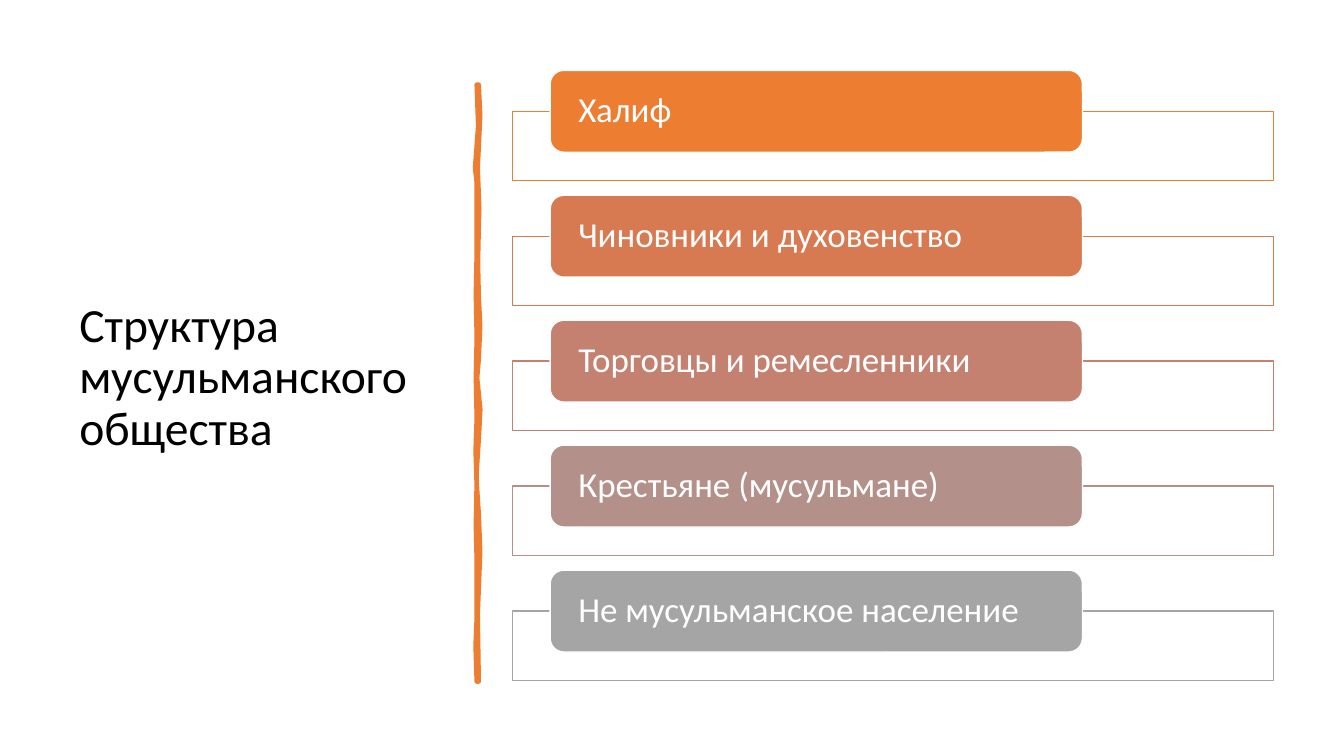
from dataclasses import dataclass

from lxml.etree import SubElement
from pptx import Presentation
from pptx.dml.color import RGBColor
from pptx.enum.shapes import MSO_SHAPE
from pptx.enum.text import MSO_ANCHOR, MSO_AUTO_SIZE, PP_ALIGN
from pptx.oxml.ns import qn
from pptx.shapes.autoshape import Shape
from pptx.slide import Slide
from pptx.text.text import TextFrame
from pptx.util import Pt

PX = 9525
FONT = "Calibri"
BLACK = RGBColor(0x00, 0x00, 0x00)
WHITE = RGBColor(0xFF, 0xFF, 0xFF)
ORANGE = RGBColor(0xED, 0x7D, 0x31)
TERRACOTTA = RGBColor(0xD8, 0x7A, 0x51)
ROSE = RGBColor(0xC4, 0x81, 0x70)
MAUVE = RGBColor(0xB4, 0x90, 0x8B)
GRAY = RGBColor(0xA5, 0xA5, 0xA5)


@dataclass(frozen=True)
class Box:
    left: int
    top: int
    width: int
    height: int

    def lower(self, distance: int) -> "Box":
        return Box(self.left, self.top + distance, self.width, self.height)

    def emu(self) -> tuple[int, int, int, int]:
        return self.left * PX, self.top * PX, self.width * PX, self.height * PX


@dataclass(frozen=True)
class SocialClass:
    name: str
    color: RGBColor


CLASSES = [
    SocialClass("Халиф", ORANGE),
    SocialClass("Чиновники и духовенство", TERRACOTTA),
    SocialClass("Торговцы и ремесленники", ROSE),
    SocialClass("Крестьяне (мусульмане)", MAUVE),
    SocialClass("Не мусульманское население", GRAY),
]
TITLE = Box(66, 67, 359, 587)
FRAME = Box(488, 106, 725, 66)
LABEL = Box(524, 67, 507, 78)
ROW_STEP = 119
LABEL_INSET = 23

BRUSH_UNITS_PER_PX = 10
BRUSH_RIGHT_EDGE = [
    (4560, 806), (4574, 1100), (4560, 1402), (4550, 1600), (4565, 1980),
    (4560, 2170), (4553, 2500), (4560, 2822), (4574, 3100), (4560, 3418),
    (4545, 3600), (4575, 3900), (4560, 4186), (4537, 4540), (4560, 4896),
    (4574, 5250), (4560, 5606), (4550, 5850), (4560, 6490),
]
BRUSH_LEFT_EDGE = [
    (4541, 6490), (4530, 6150), (4541, 5885), (4541, 5347), (4533, 5000),
    (4541, 4579), (4530, 4300), (4541, 3984), (4533, 3600), (4541, 3216),
    (4533, 2800), (4541, 2400), (4541, 1738), (4525, 1600), (4555, 1200),
    (4541, 806),
]


def write(frame: TextFrame, text: str, *, size: int, color: RGBColor) -> None:
    frame.word_wrap = True
    frame.auto_size = MSO_AUTO_SIZE.NONE
    frame.vertical_anchor = MSO_ANCHOR.MIDDLE
    para = frame.paragraphs[0]
    para.alignment = PP_ALIGN.LEFT
    para.line_spacing = 0.9
    span = para.add_run()
    span.text = text
    span.font.name = FONT
    span.font.size = Pt(size)
    span.font.color.rgb = color


def paint(shape: Shape, *, fill: RGBColor, line: RGBColor, width: float) -> None:
    shape.shadow.inherit = False
    shape.fill.solid()
    shape.fill.fore_color.rgb = fill
    shape.line.color.rgb = line
    shape.line.width = Pt(width)


def draw_title(page: Slide) -> None:
    title = page.shapes.title
    title.left, title.top, title.width, title.height = TITLE.emu()
    write(title.text_frame, "Структура мусульманского общества", size=34, color=BLACK)


def draw_brush_line(page: Slide) -> None:
    start, *rest = BRUSH_RIGHT_EDGE + BRUSH_LEFT_EDGE
    builder = page.shapes.build_freeform(*start, scale=PX / BRUSH_UNITS_PER_PX)
    builder.add_line_segments(rest, close=True)
    brush = builder.convert_to_shape()
    paint(brush, fill=ORANGE, line=ORANGE, width=3.25)
    SubElement(brush.line._get_or_add_ln(), qn("a:round"))


def draw_class(page: Slide, social_class: SocialClass, distance: int) -> None:
    frame = page.shapes.add_shape(MSO_SHAPE.RECTANGLE, *FRAME.lower(distance).emu())
    paint(frame, fill=WHITE, line=social_class.color, width=1)
    label = page.shapes.add_shape(MSO_SHAPE.ROUNDED_RECTANGLE, *LABEL.lower(distance).emu())
    paint(label, fill=social_class.color, line=WHITE, width=1)
    label.text_frame.margin_left = label.text_frame.margin_right = LABEL_INSET * PX
    label.text_frame.margin_top = label.text_frame.margin_bottom = 0
    write(label.text_frame, social_class.name, size=25, color=WHITE)


def main() -> None:
    deck = Presentation()
    deck.slide_width, deck.slide_height = 1280 * PX, 720 * PX
    page = deck.slides.add_slide(deck.slide_layouts.get_by_name("Title Only"))
    draw_title(page)
    draw_brush_line(page)
    for row, social_class in enumerate(CLASSES):
        draw_class(page, social_class, row * ROW_STEP)
    deck.save("out.pptx")


if __name__ == "__main__":
    main()
